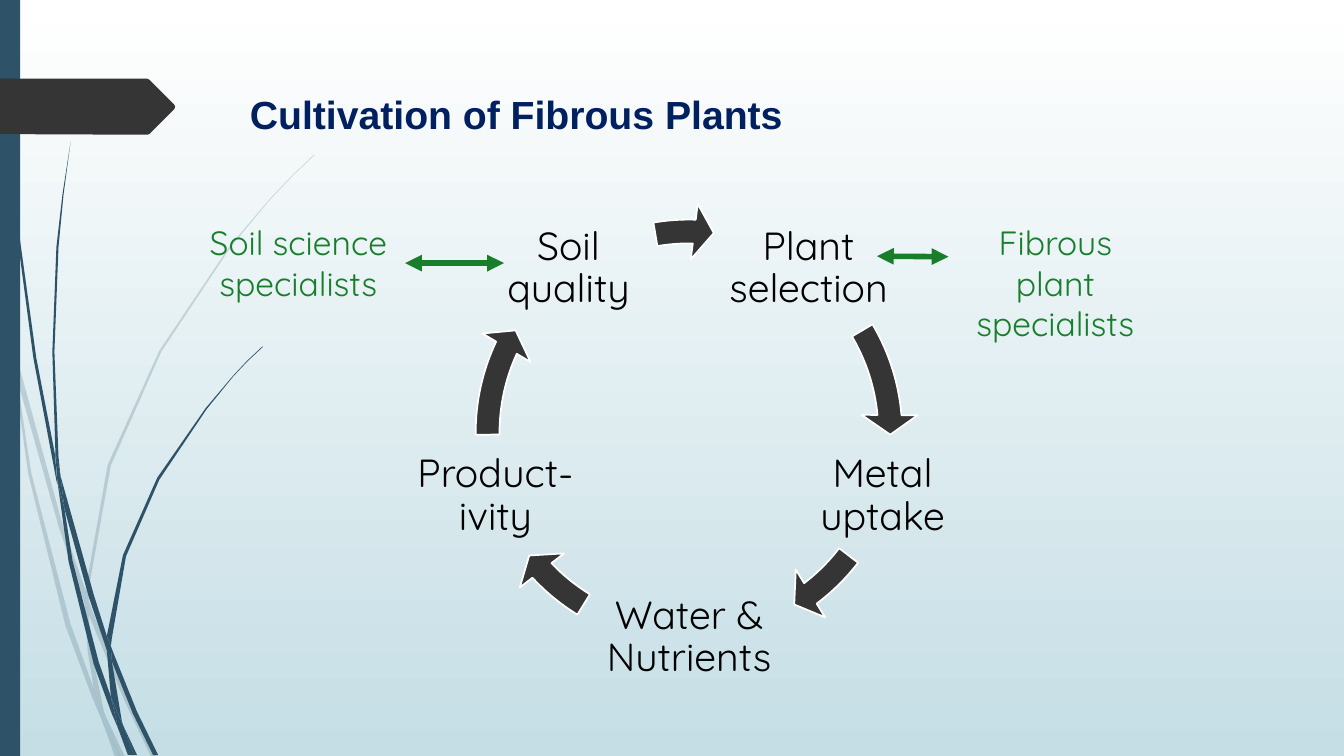
from lxml import etree
from pptx import Presentation
from pptx.dml.color import RGBColor
from pptx.enum.shapes import MSO_CONNECTOR, MSO_SHAPE
from pptx.enum.text import MSO_ANCHOR, MSO_AUTO_SIZE, PP_ALIGN
from pptx.oxml.ns import qn
from pptx.util import Pt

RING = MSO_SHAPE.CIRCULAR_ARROW
RECT = MSO_SHAPE.RECTANGLE
LINE = MSO_CONNECTOR.STRAIGHT
TOP, MID = MSO_ANCHOR.TOP, MSO_ANCHOR.MIDDLE
LEFT, CENTER = PP_ALIGN.LEFT, PP_ALIGN.CENTER
GROW = MSO_AUTO_SIZE.SHAPE_TO_FIT_TEXT

HEX = {
    "white": "FFFFFF", "mist": "C5DEE5", "teal": "2E5369", "dark": "353535",
    "navy": "002060", "black": "000000", "green": "187E2B",
}
FONT = "Quicksand"

# Content: text and box (left, top, width, height)
TITLE = ("Cultivation of Fibrous Plants", (171.4, 60.5, 620.6, 78.5))
STEPS = [
    ("Plant selection", (509.8, 148.3, 135.4, 87.1)),
    ("Metal uptake", (571, 311, 118.8, 87.1)),
    ("Water & Nutrients", (416.2, 411.8, 151.9, 87.1)),
    ("Product-ivity", (295.2, 311, 117.4, 87.1)),
    ("Soil quality", (344.9, 148.3, 122.4, 87.1)),
]
EXPERTS = [
    ("Fibrous plant specialists", (677.5, 155.2, 152.6, 94.3)),
    ("Soil science specialists", (136.8, 155.2, 152.6, 65.5)),
]

# Cycle arrows: shared circle, then (end, start) angle of each
CYCLE = (328.3, 145.4, 327.6, 327.6)
BAND, TIP, HEAD = 0.052, 3.353, 0.061
ARCS = [(212.956, 197.641), (31.733, 22.512), (82.135, 72.914),
        (123.005, 107.69), (162.909, 156.245)]

# Grass: corners of each piece of a blade
PALE = [
    [(7.9, 252), (6.5, 231.8), (0, 203), (0, 215.3), (7.2, 247.7)],
    [(41.8, 375.8), (60.5, 431.3), (61.2, 421.9), (44.6, 374.4), (10.1, 248.4), (12.2, 270.7)],
    [(66.2, 437), (63.4, 429.1), (63.4, 439.2), (88.6, 499.7), (108, 540.7), (111.6, 540.7),
     (91.4, 498.2)],
    [(85.7, 540.7), (89.3, 540.7), (75.6, 511.9)],
    [(67, 491.8), (50.4, 445.7), (22.3, 337.7), (12.2, 270.7), (7.9, 252), (20.2, 338.4),
     (46.8, 447.1), (66.2, 499), (72.7, 514.1), (71.3, 509)],
    [(60.5, 431.3), (62.6, 465.1), (67, 491.8), (69.1, 498.2), (75.6, 511.9), (74.2, 508.3),
     (65.5, 465.1), (63.4, 439.2), (63.4, 437.8)],
    [(63.4, 420.5), (79.2, 332.6), (115.2, 251.3), (164.9, 176.4), (193, 142.6), (208.8, 126),
     (224.6, 110.9), (224.6, 110.2), (208.1, 126), (193, 141.8), (164.2, 175.7),
     (113.8, 250.6), (77, 331.9), (61.2, 420.5), (61.2, 421.9), (63.4, 429.1)],
    [(72.7, 514.1), (82.1, 540.7), (85.7, 540.7)],
    [(63.4, 437.8), (63.4, 439.2), (63.4, 429.1), (61.2, 421.9), (60.5, 431.3)],
    [(69.1, 498.2), (67, 491.8), (71.3, 509), (72.7, 514.1), (85.7, 540.7), (75.6, 511.9)],
]
DEEP = [
    [(5, 79.2), (12.2, 167.8), (23.8, 255.6), (40.3, 343.4), (41, 346.3), (39.6, 329),
     (39.6, 326.2), (25.9, 255.6), (13.7, 167), (5.8, 78.5), (3.6, 34.6), (2.9, 0),
     (2.2, 0), (2.9, 34.6)],
    [(63.4, 426.2), (76.3, 464.4), (76.3, 454.3), (67, 424.8), (43.2, 339.8), (46.1, 363.6)],
    [(81.4, 467.3), (79.2, 461.5), (79.9, 472.3), (95, 509.8), (109.4, 539.3), (113, 539.3),
     (97.9, 508.3)],
    [(79.2, 497.5), (70.6, 473), (51.8, 400.3), (46.1, 363.6), (41, 343.4), (49, 401),
     (67, 474.5), (79.9, 509.8), (84.2, 519.8), (83.5, 516.2)],
    [(43.2, 339.8), (41.8, 326.2), (38.9, 251.3), (41.8, 176.4), (45.4, 139), (50.4, 101.5),
     (44.6, 139), (40.3, 176.4), (37.4, 251.3), (39.6, 323.3)],
    [(95.8, 539.3), (97.9, 539.3), (87.8, 517.7)],
    [(41, 343.4), (46.1, 363.6), (43.2, 339.8), (39.6, 323.3), (39.6, 326.2)],
    [(79.9, 455.8), (90, 397.4), (113.8, 342.7), (147.6, 292.3), (166.3, 269.3),
     (176.4, 258.5), (187.9, 247.7), (187.2, 247.7), (176.4, 257.8), (166.3, 268.6),
     (146.9, 291.6), (112.3, 341.3), (87.8, 396.7), (76.3, 454.3), (79.2, 461.5)],
    [(84.2, 519.8), (91.4, 539.3), (94.3, 539.3)],
    [(76.3, 464.4), (79.2, 497.5), (83.5, 508.3), (87.8, 517.7), (87.1, 515.5),
     (79.9, 472.3), (78.5, 468.7)],
    [(76.3, 464.4), (78.5, 468.7), (79.9, 472.3), (79.2, 461.5), (76.3, 454.3)],
    [(83.5, 508.3), (79.2, 497.5), (83.5, 516.2), (84.2, 519.8), (93.6, 539.3),
     (95.8, 539.3), (87.8, 517.7)],
]
TAG = [(124.6, 77.8), (106.6, 95.8), (105.1, 96.2), (97.9, 96.2), (0, 95.8), (0, 56.2),
       (97.9, 56.2), (105.1, 56.2), (106.6, 56.9), (124.6, 74.9), (125.1, 76.3)]

deck = Presentation()
deck.slide_width, deck.slide_height = Pt(960), Pt(540)
slide = deck.slides.add_slide(deck.slide_layouts[6])
shapes = slide.shapes


def color(name):
    return RGBColor.from_string(HEX[name])


def paint(shape, name, alpha=None):
    shape.shadow.inherit = False
    shape.fill.solid()
    shape.fill.fore_color.rgb = color(name)
    shape.line.fill.background()
    if alpha:
        tint = shape.fill._xPr.find(".//" + qn("a:srgbClr"))
        etree.SubElement(tint, qn("a:alpha")).set("val", str(alpha * 1000))


def outline(points, name, alpha=None):
    dots = [(Pt(x), Pt(y)) for x, y in points]
    form = shapes.build_freeform(*dots[0], scale=1.0)
    form.add_line_segments(dots[1:], close=True)
    paint(form.convert_to_shape(), name, alpha)


def label(text, box, size, name, font=FONT, align=CENTER, anchor=TOP):
    item = shapes.add_textbox(*map(Pt, box))
    frame = item.text_frame
    frame.word_wrap = True
    frame.vertical_anchor = anchor
    frame.text = text
    para = frame.paragraphs[0]
    para.alignment = align
    face = para.runs[0].font
    face.name, face.size = font, Pt(size)
    face.color.rgb = color(name)
    return item


def link(start, end):
    line = shapes.add_connector(LINE, *map(Pt, start + end))
    line.line.color.rgb = color("green")
    line.line.width = Pt(4)
    for tag in ("a:headEnd", "a:tailEnd"):
        etree.SubElement(line.line._ln, qn(tag)).set("type", "triangle")
    etree.SubElement(line._element.spPr, qn("a:effectLst"))
    return line


# Background
back = slide.background.fill
back.gradient()
back.gradient_angle = 270
for stop, name, place in zip(back.gradient_stops, ("white", "mist"), (0, 1)):
    stop.color.rgb = color(name)
    stop.position = place

# Grass, side bar and tag
for piece in PALE:
    outline(piece, "teal", 20)
for piece in DEEP:
    outline(piece, "teal")
paint(shapes.add_shape(RECT, 0, 0, Pt(14.4), Pt(540)), "teal")
outline(TAG, "dark")

# Title
title = label(*TITLE, 28, "navy", "Arial", LEFT)
title.text_frame.margin_top = Pt(4)
title.text_frame.paragraphs[0].runs[0].font.bold = True

# Cycle
for (text, box), (end, start) in zip(STEPS, ARCS):
    frame = label(text, box, 28, "black", anchor=MID).text_frame
    frame.margin_left = frame.margin_right = Pt(2.8)
    frame.margin_top = frame.margin_bottom = Pt(2.8)
    frame.paragraphs[0].line_spacing = 0.9
    arc = shapes.add_shape(RING, *map(Pt, CYCLE))
    for i, value in enumerate((BAND, TIP, end, start, HEAD)):
        arc.adjustments[i] = value
    paint(arc, "dark")
    arc.line.color.rgb = color("white")
    arc.line.width = Pt(1.25)

# Specialists and their links
plant, soil = [label(text, box, 24, "green") for text, box in EXPERTS]
for item in (plant, soil):
    item.text_frame.auto_size = GROW
link((626.4, 183), (677.5, 183.4))
link((289.4, 187.95), (360, 187.95)).begin_connect(soil, 3)

deck.save("out.pptx")
